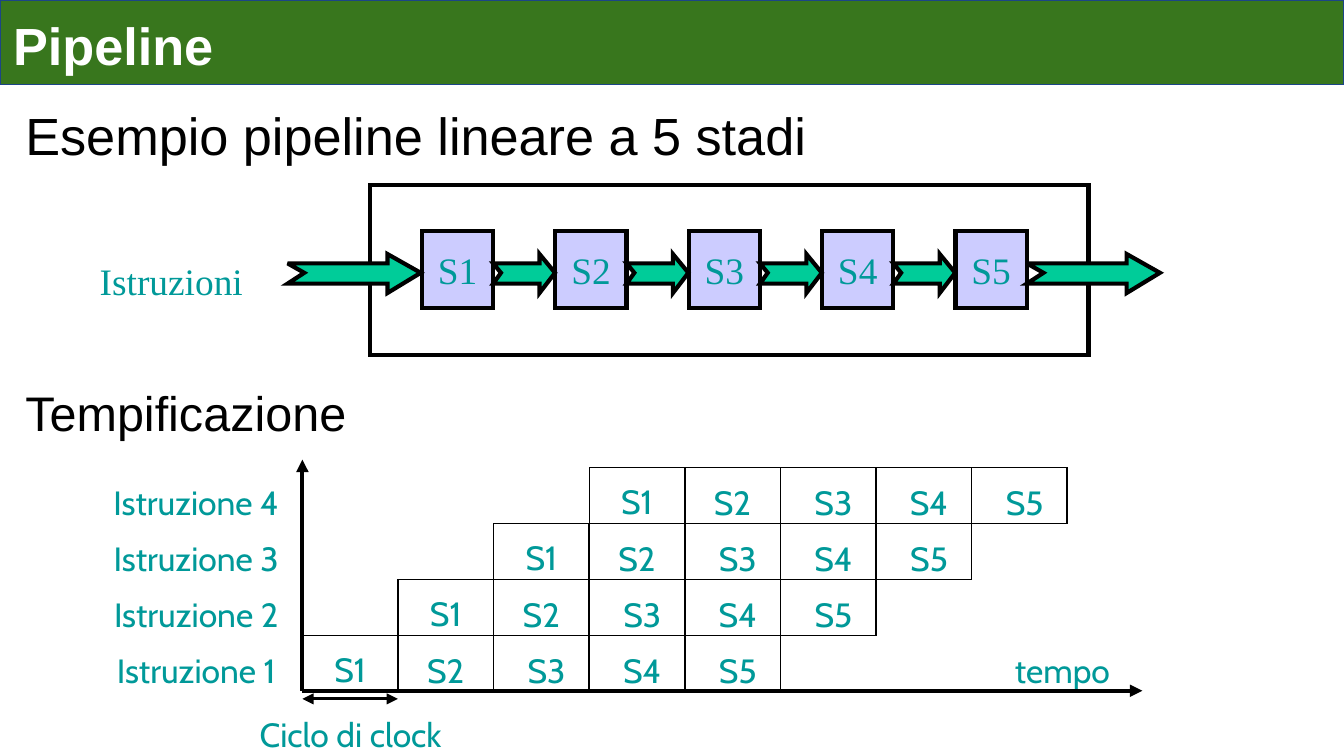
"""Build the slide on a five-stage linear pipeline and its timing diagram."""
from lxml import etree
from pptx import Presentation
from pptx.dml.color import RGBColor
from pptx.enum.shapes import MSO_CONNECTOR, MSO_SHAPE
from pptx.enum.text import MSO_ANCHOR, PP_ALIGN
from pptx.oxml.ns import qn
from pptx.util import Inches, Pt

COLORS = {
    "black": "000000",
    "white": "FFFFFF",
    "title": "38761D",
    "title_line": "1C4587",
    "stage": "CCCCFF",
    "arrow": "00CC99",
    "label": "009999",
}


def style_shape(sp, line, width, fill=None):
    sp.shadow.inherit = False
    sp.line.color.rgb = RGBColor.from_string(COLORS[line])
    sp.line.width = Pt(width)
    etree.SubElement(sp.element.spPr.find(qn("a:ln")), qn("a:miter"), lim="800000")
    if fill:
        sp.fill.solid()
        sp.fill.fore_color.rgb = RGBColor.from_string(COLORS[fill])
    else:
        sp.fill.background()


def write_text(sp, text, size, font, color="label", align=PP_ALIGN.CENTER, anchor=MSO_ANCHOR.TOP):
    tf = sp.text_frame
    tf.word_wrap = True
    tf.vertical_anchor = anchor
    tf.text = text
    p = tf.paragraphs[0]
    p.alignment = align
    r = p.runs[0]
    r.font.size = Pt(size)
    r.font.name = font
    r.font.color.rgb = RGBColor.from_string(COLORS[color])
    return r


prs = Presentation()
prs.slide_width, prs.slide_height = Inches(10), Inches(10) * 9 // 16
s = prs.slides.add_slide(prs.slide_layouts[6])
shapes = s.shapes

for text, top, height, size in [
    ("Esempio pipeline lineare a 5 stadi", 0.72, 3.81, 28),
    ("Tempificazione", 2.8, 0.75, 26),
]:
    sp = shapes.add_textbox(Inches(0.09), Inches(top), Inches(8.98), Inches(height))
    write_text(sp, text, size, "Arial", "black", PP_ALIGN.LEFT)

frame = shapes.add_shape(MSO_SHAPE.RECTANGLE, Inches(2.75), Inches(1.38), Inches(5.35), Inches(1.26))
style_shape(frame, "black", 2.25)

STAGES = 5
stage_left, stage_width = 3.14, 0.53
stage_pitch = (7.11 - stage_left) / (STAGES - 1)
for i in range(STAGES):
    left = stage_left + i * stage_pitch
    sp = shapes.add_shape(MSO_SHAPE.RECTANGLE, Inches(left), Inches(1.72), Inches(stage_width), Inches(0.57))
    style_shape(sp, "black", 2.25, "stage")
    write_text(sp, f"S{i + 1}", 20, "Times New Roman", anchor=MSO_ANCHOR.MIDDLE)

arrows = [(2.14, 0.99)]
arrows += [(stage_left + stage_width + i * stage_pitch, 0.46) for i in range(STAGES - 1)]
arrows += [(7.64, 0.99)]
for left, width in arrows:
    neck, tip, notch = left + width * 0.75, left + width, left + width / 8
    points = [(neck, 1.96), (neck, 1.89), (tip, 2.03), (neck, 2.18), (neck, 2.11), (left, 2.11), (notch, 2.03)]
    builder = shapes.build_freeform(Inches(left), Inches(1.96))
    builder.add_line_segments([(Inches(x), Inches(y)) for x, y in points], close=True)
    style_shape(builder.convert_to_shape(), "black", 2.25, "arrow")

sp = shapes.add_textbox(Inches(0.45), Inches(1.87), Inches(1.65), Inches(0.33))
write_text(sp, "Istruzioni", 20, "Times New Roman")

ROWS = 4
origin_x, base_top, cell_width = 2.25, 4.73, 0.71
cell_height = (base_top - 3.48) / (ROWS - 1)
column_pitch = (7.23 - origin_x) / (ROWS + STAGES - 2)
labels = [("tempo", 7.31, 4.79, 1.19), ("Ciclo di clock", 1.46, 5.26, 2.3)]
for row in range(ROWS):
    top = base_top - row * cell_height
    labels.append((f"Istruzione {row + 1}", 0.67, top + 0.06, 1.58))
    for stage in range(STAGES):
        left = origin_x + (row + stage) * column_pitch
        cell = shapes.add_shape(
            MSO_SHAPE.RECTANGLE, Inches(left), Inches(top), Inches(cell_width), Inches(cell_height)
        )
        style_shape(cell, "black", 0.75)
        dx = 0.04 if stage < 2 else 0.08
        dy = 0.05 if stage == 0 else 0.06
        labels.append((f"S{stage + 1}", left + dx, top + dy, 0.63))

for text, left, top, width in labels:
    sp = shapes.add_textbox(Inches(left), Inches(top), Inches(width), Inches(0.3))
    write_text(sp, text, 18, "Cabin")

for x1, y1, x2, y2, width, ends in [
    (origin_x, 3.42, origin_x, 5.14, 2.25, ["headEnd"]),
    (origin_x, 5.14, 8.5, 5.14, 2.25, ["tailEnd"]),
    (origin_x, 5.2, origin_x + cell_width, 5.2, 1.5, ["headEnd", "tailEnd"]),
]:
    line = shapes.add_connector(MSO_CONNECTOR.STRAIGHT, Inches(x1), Inches(y1), Inches(x2), Inches(y2))
    line.line.color.rgb = RGBColor.from_string(COLORS["black"])
    line.line.width = Pt(width)
    sp_pr = line.element.spPr
    for end in ends:
        etree.SubElement(sp_pr.find(qn("a:ln")), qn(f"a:{end}"), type="triangle")
    etree.SubElement(sp_pr, qn("a:effectLst"))

title = shapes.add_shape(MSO_SHAPE.RECTANGLE, 0, 0, Inches(10), Inches(0.63))
style_shape(title, "title_line", 0.75, "title")
title.text_frame.margin_top = title.text_frame.margin_bottom = Inches(0.1)
r = write_text(title, "Pipeline", 28, "Arial", "white", PP_ALIGN.LEFT)
r.font.bold = True

prs.save("out.pptx")
